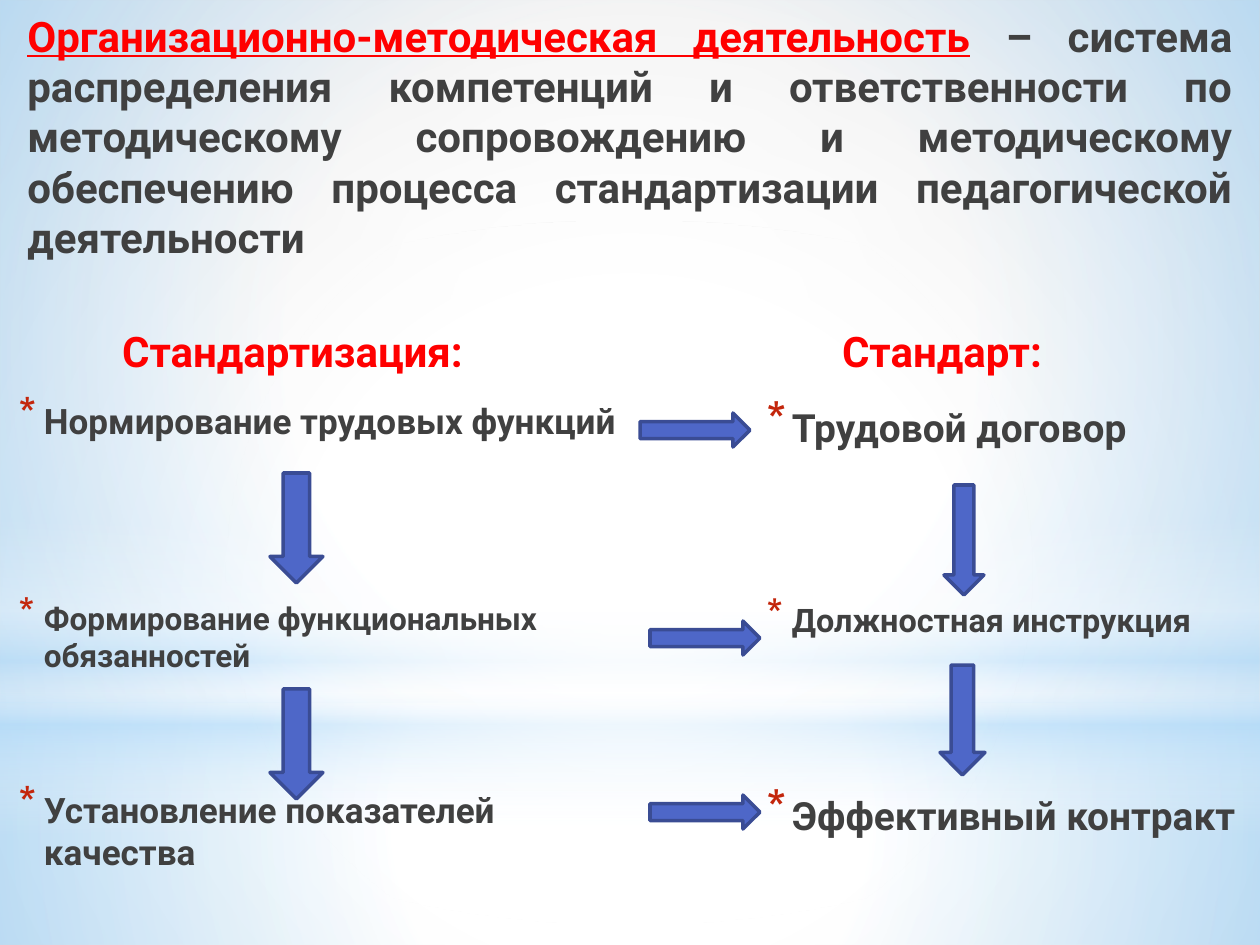
from lxml import etree
from pptx import Presentation
from pptx.dml.color import RGBColor
from pptx.enum.shapes import MSO_SHAPE
from pptx.enum.text import MSO_ANCHOR, PP_ALIGN
from pptx.oxml.ns import nsdecls, qn
from pptx.oxml import parse_xml
from pptx.util import Emu, Pt

RECTANGLE, OVAL, DOWN_ARROW = MSO_SHAPE.RECTANGLE, MSO_SHAPE.OVAL, MSO_SHAPE.DOWN_ARROW
TOP, BOTTOM = MSO_ANCHOR.TOP, MSO_ANCHOR.BOTTOM
LEFT, CENTER, JUSTIFY = PP_ALIGN.LEFT, PP_ALIGN.CENTER, PP_ALIGN.JUSTIFY

EMU_PER_PX = 914400 / 126
FONT = "Roboto"
COLORS = {
    "white": "FFFFFF", "grey": "D1D1D1", "sky": "B4DCFA", "text": "404040",
    "red": "FF0000", "bullet": "C3260C", "arrow": "4E67C8", "outline": "3A4C94",
}
CENTERED = (50, 50, 50, 50)
BACKDROP = [
    (RECTANGLE, (0, 703, 1260, 242),
     [(0, "white", 91), (37, "white", 76), (100, "sky", 79)], CENTERED),
    (RECTANGLE, (0, 0, 1260, 703),
     [(0, "white", 89), (48, "white", 62), (100, "sky", 79)], CENTERED),
    (RECTANGLE, (0, 519, 1260, 315),
     [(0, "white", 0), (29, "white", 30), (45, "sky", 40),
      (55, "white", 26), (65, "sky", 60), (100, "white", 0)], None),
    (OVAL, (0, 221, 1260, 703), [(0, "white", 100), (56, "white", 0)], CENTERED),
]
TITLE = [
    ("Организационно-методическая деятельность", "red", True),
    (" – система распределения компетенций и ответственности по методическому "
     "сопровождению и методическому обеспечению процесса стандартизации "
     "педагогической деятельности", "text", False),
]
HEADINGS = [
    ("Стандартизация:", (62, 294, 461, 88)),
    ("Стандарт:", (669, 294, 546, 88)),
]
LISTS = [
    ((0, 393, 660, 515), [
        ("Нормирование трудовых функций", 20, 0),
        ("Формирование функциональных обязанностей", 18, 90),
        ("Установление показателей качества", 20, 65)]),
    ((748, 397, 512, 473), [
        ("Трудовой договор", 22.2, 0),
        ("Должностная инструкция", 18.5, 86),
        ("Эффективный контракт", 22.2, 87)]),
]
ARROW_LENGTH = 110
ARROWS = [
    (270, 689, 53, 0), (270, 473, 53, 0),
    (688, 757, 34, 270), (688, 583, 34, 270), (678, 375, 34, 270),
    (940, 665, 45, 0), (944, 485, 40, 0),
]


def px(value):
    """Turn pixels into EMU."""
    return Emu(round(value * EMU_PER_PX))


def rgb(name):
    """Look up a named colour."""
    return RGBColor.from_string(COLORS[name])


def set_values(target, values):
    """Set attributes from a dict of format values."""
    for name, value in values.items():
        setattr(target, name, value)


def set_gradient(fill, owner, stops, focus):
    """Give a fill a circular gradient round a focus, or a downward one."""
    fill.solid()
    fill.fore_color.rgb = rgb("white")
    gradient = parse_xml(f'<a:gradFill {nsdecls("a")} rotWithShape="1"><a:gsLst/></a:gradFill>')
    for position, color, opacity in stops:
        stop = etree.SubElement(gradient[0], qn("a:gs"), pos=str(position * 1000))
        tint = etree.SubElement(stop, qn("a:srgbClr"), val=COLORS[color])
        etree.SubElement(tint, qn("a:alpha"), val=str(opacity * 1000))
    if focus:
        circle = etree.SubElement(gradient, qn("a:path"), {"path": "circle"})
        sides = {side: str(share * 1000) for side, share in zip("ltrb", focus)}
        etree.SubElement(circle, qn("a:fillToRect"), sides)
    else:
        etree.SubElement(gradient, qn("a:lin"), ang="5400000", scaled="0")
    solid = owner.find(".//" + qn("a:solidFill"))
    solid.getparent().replace(solid, gradient)


def add_panel(slide, kind, box, stops, focus):
    """Add a translucent backdrop panel."""
    shape = slide.shapes.add_shape(kind, *map(px, box))
    shape.shadow.inherit = False
    shape.line.fill.background()
    set_gradient(shape.fill, shape.element, stops, focus)


def add_frame(slide, box, anchor):
    """Add a wrapping text box and return its text frame."""
    frame = slide.shapes.add_textbox(*map(px, box)).text_frame
    set_values(frame, {"word_wrap": True, "vertical_anchor": anchor})
    return frame


def add_run(paragraph, text, size, color, underline=False):
    """Add a bold run."""
    run = paragraph.add_run()
    run.text = text
    set_values(run.font, {"name": FONT, "size": Pt(size), "bold": True, "underline": underline})
    run.font.color.rgb = rgb(color)


def add_text(slide, box, runs, alignment, anchor):
    """Add a one-paragraph text."""
    paragraph = add_frame(slide, box, anchor).paragraphs[0]
    paragraph.alignment = alignment
    for text, color, underline in runs:
        add_run(paragraph, text, 24, color, underline)


def set_bullet(paragraph):
    """Give a paragraph a hanging asterisk bullet."""
    properties = paragraph._p.get_or_add_pPr()
    properties.set("marL", "228600")
    properties.set("indent", "-182880")
    color = etree.SubElement(properties, qn("a:buClr"))
    etree.SubElement(color, qn("a:srgbClr"), val=COLORS["bullet"])
    etree.SubElement(properties, qn("a:buSzPct"), val="130000")
    etree.SubElement(properties, qn("a:buChar"), char="*")


def add_list(slide, box, items):
    """Add a bulleted list with a set gap above each item."""
    frame = add_frame(slide, box, TOP)
    for index, (text, size, gap) in enumerate(items):
        paragraph = frame.add_paragraph() if index else frame.paragraphs[0]
        set_values(paragraph, {"alignment": LEFT, "space_before": Pt(gap)})
        set_bullet(paragraph)
        add_run(paragraph, text, size, "text")


def add_arrow(slide, left, top, width, rotation):
    """Add a block arrow."""
    shape = slide.shapes.add_shape(DOWN_ARROW, *map(px, (left, top, width, ARROW_LENGTH)))
    shape.rotation = rotation
    shape.shadow.inherit = False
    shape.fill.solid()
    shape.fill.fore_color.rgb = rgb("arrow")
    shape.line.color.rgb = rgb("outline")
    shape.line.width = Pt(2)


def main():
    """Build the slide and save it."""
    presentation = Presentation()
    set_values(presentation, {"slide_width": px(1260), "slide_height": px(945)})
    slide = presentation.slides.add_slide(presentation.slide_layouts[6])
    set_gradient(slide.background.fill, slide.element,
                 [(0, "white", 100), (42, "white", 100), (100, "grey", 100)], (24, 44, 24, 12))
    for panel in BACKDROP:
        add_panel(slide, *panel)
    for text, box in HEADINGS:
        add_text(slide, box, [(text, "red", False)], CENTER, BOTTOM)
    for box, items in LISTS:
        add_list(slide, box, items)
    add_text(slide, (15, 4, 1230, 212), TITLE, JUSTIFY, TOP)
    for arrow in ARROWS:
        add_arrow(slide, *arrow)
    presentation.save("out.pptx")


if __name__ == "__main__":
    main()
